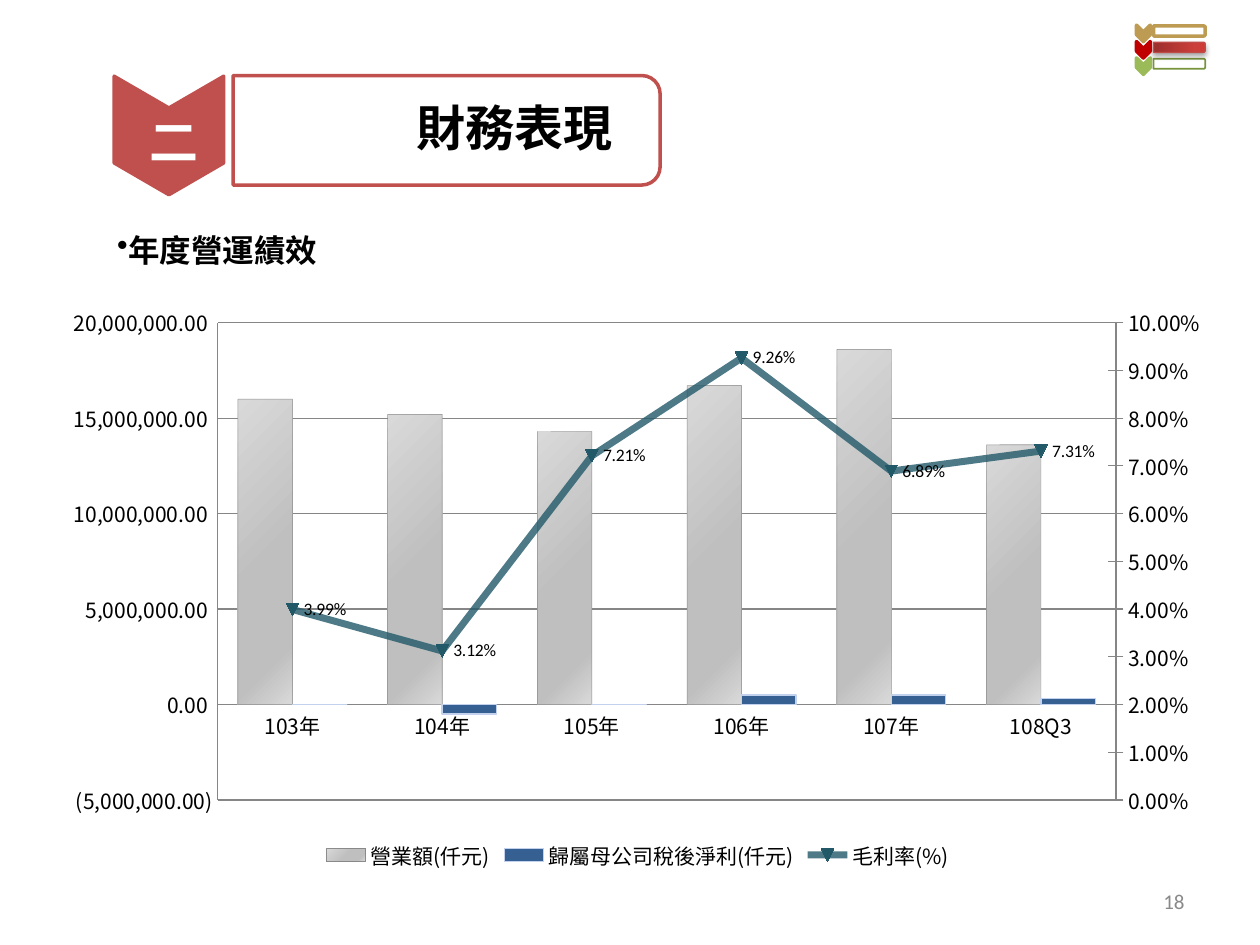
"""Build the yearly performance slide with a combined column and line chart."""
import copy

import pptx
import pptx.chart.axis
import pptx.chart.data
import pptx.dml.color
import pptx.enum.chart
import pptx.enum.shapes
import pptx.enum.text
import pptx.oxml
import pptx.oxml.ns
import pptx.util

Pt = pptx.util.Pt
qn = pptx.oxml.ns.qn
KIND = pptx.enum.shapes.MSO_SHAPE
ALIGN = pptx.enum.text.PP_ALIGN
TICK = pptx.enum.chart.XL_TICK_MARK
SPACE = pptx.oxml.ns.nsdecls("a", "c")
CJK = "Noto Sans CJK SC"
HUES = {
    "black": "000000", "white": "FFFFFF", "red": "C0504D", "gold": "BD9B53",
    "crimson": "C00000", "lime": "9BBB59", "olive": "77933C", "rim": "BF4C48",
    "page": "898989", "axis": "868686", "edge": "808080", "blue": "376092",
    "pale": "C2D1ED", "teal": "215968", "ruby": "9C2F2D", "rose": "CB3E3A",
    "coral": "CE3B37", "mist": "D9D9D9", "ash": "BFBFBF",
}


def hue(name):
    return pptx.dml.color.RGBColor.from_string(HUES[name])


def node(tag, body="", **attrs):
    text = "".join(f' {key}="{val}"' for key, val in attrs.items())
    return pptx.oxml.parse_xml(f"<{tag} {SPACE}{text}>{body}</{tag}>")


def prune(root, tag):
    for old in root.findall(qn(tag)):
        root.remove(old)


def paint(fill, name):
    fill.solid()
    fill.fore_color.rgb = hue(name)


def fade(item, route, share):
    tags = "/".join(qn(tag) for tag in route)
    item._element.find(".//" + qn("c:spPr" if route[0] == "a:ln" else "p:spPr")
                       + "/" + tags).append(node("a:alpha", val=share * 1000))


def blend(item, fill, stops, angle):
    fill.gradient()
    fill.gradient_angle = 360 - angle
    marks = item._element.find(".//" + qn("a:gsLst"))
    prune(marks, "a:gs")
    for place, name in stops:
        marks.append(node("a:gs", f'<a:srgbClr val="{HUES[name]}"/>',
                          pos=place * 1000))


def write(slide, box, text, size, name="black", font=CJK, bold=True,
          align=ALIGN.LEFT, insets=(7.2, 3.6, 7.2, 3.6), middle=True,
          bullet=None):
    frame = slide.shapes.add_textbox(*map(Pt, box)).text_frame
    frame.word_wrap = True
    (frame.margin_left, frame.margin_top,
     frame.margin_right, frame.margin_bottom) = map(Pt, insets)
    anchor = pptx.enum.text.MSO_ANCHOR
    frame.vertical_anchor = anchor.MIDDLE if middle else anchor.TOP
    para = frame.paragraphs[0]
    para.text = text
    para.alignment = align
    if bullet:
        para._p.get_or_add_pPr().append(node("a:buChar", char=bullet))
    face = para.font
    face.size, face.bold, face.name = Pt(size), bold, font
    face.color.rgb = hue(name)
    para._p.find(".//" + qn("a:defRPr")).append(node("a:ea", typeface=font))
    return para


def turned(slide, kind, box, line, width, fill=None):
    left, top, wide, high = box
    shape = slide.shapes.add_shape(
        kind, Pt(left + (wide - high) / 2), Pt(top + (high - wide) / 2),
        Pt(high), Pt(wide))
    shape.rotation = 90
    shape.shadow.inherit = False
    if fill:
        paint(shape.fill, fill)
    else:
        shape.fill.background()
    shape.line.color.rgb = hue(line)
    shape.line.width = Pt(width)
    return shape


def banner(slide):
    bar = turned(slide, KIND.ROUND_2_SAME_RECTANGLE, (133.2, 43.2, 244, 62.6),
                 "red", 2, "white")
    fade(bar, ("a:solidFill", "a:srgbClr"), 90)
    title = write(slide, (133.2, 43.2, 335.5, 62.6), "財務表現", 28,
                  insets=(105, 1.4, 1.4, 1.4))
    title.line_spacing = 0.9
    mark = turned(slide, KIND.CHEVRON, (65.2, 43.6, 62.6, 67.7), "red", 2, "red")
    mark.adjustments[0] = 0.29
    count = write(slide, (48.2, 66.2, 102.2, 32.4), "二", 28, "white",
                  align=ALIGN.CENTER, insets=(1.4,) * 4)
    count.line_spacing = 0.9


def badge(slide):
    rows = [("gold", "gold", 2, None), ("crimson", "rim", 0.75, "rose"),
            ("lime", "olive", 1, "white")]
    for step in (0, 2, 1):
        tip, line, width, fill = rows[step]
        down = step * 9.36
        bar = turned(slide, KIND.ROUND_2_SAME_RECTANGLE,
                     (659.2, 14.8 + down, 29.5, 5.8), line, width, fill)
        if fill == "white":
            fade(bar, ("a:solidFill", "a:srgbClr"), 90)
        elif fill:
            blend(bar, bar.fill, [(0, "ruby"), (80, "rose"), (100, "coral")], 270)
            glow = ('<a:outerShdw blurRad="39400" dist="22900" dir="5400000" '
                    'rotWithShape="0"><a:srgbClr val="000000">'
                    '<a:alpha val="35000"/></a:srgbClr></a:outerShdw>')
            old = bar._element.spPr.find(qn("a:effectLst"))
            old.getparent().replace(old, node("a:effectLst", glow))
        turned(slide, KIND.CHEVRON, (649.4, 14.4 + down, 7.9, 9.4), tip, 2, tip)


def scale(axis, low, high, unit, form):
    axis.minimum_scale, axis.maximum_scale = low, high
    axis.major_unit = unit
    axis.tick_labels.number_format = form
    axis.tick_labels.number_format_is_linked = False


def style(axis):
    axis.major_tick_mark = axis.minor_tick_mark = TICK.NONE
    axis.format.line.color.rgb = hue("axis")
    axis.tick_labels.font.size = Pt(12)
    axis.tick_labels.font.name = CJK


def split(chart):
    area = chart._chartSpace.find(".//" + qn("c:plotArea"))
    bars = area.find(qn("c:barChart"))
    rate = bars.findall(qn("c:ser"))[-1]
    prune(rate, "c:invertIfNegative")
    lines = node("c:lineChart", '<c:grouping val="standard"/><c:varyColors val="0"/>'
                 '<c:marker val="1"/><c:axId val="501"/><c:axId val="502"/>')
    lines.insert(2, rate)
    bars.addnext(lines)
    last = area.find(qn("c:valAx"))
    for tag, own, other in (("c:valAx", "502", "501"), ("c:catAx", "501", "502")):
        twin = copy.deepcopy(area.find(qn(tag)))
        twin.find(qn("c:axId")).set("val", own)
        twin.find(qn("c:crossAx")).set("val", other)
        last.addnext(twin)
        last = twin
    pptx.chart.axis.CategoryAxis(last).visible = False
    right = last.getprevious()
    right.find(qn("c:axPos")).set("val", "r")
    right.find(qn("c:crosses")).set("val", "max")
    axis = pptx.chart.axis.ValueAxis(right)
    axis.has_major_gridlines = False
    axis.major_tick_mark = TICK.CROSS
    scale(axis, 0, 0.1, 0.01, "0.00%")
    prune(area, "c:layout")
    spots = "".join(f'<c:{key} val="{val}"/>' for key, val in (
        ("layoutTarget", "inner"), ("xMode", "edge"), ("yMode", "edge"),
        ("x", 0.14), ("y", 0.05), ("w", 0.77), ("h", 0.82)))
    area.insert(0, node("c:layout", f"<c:manualLayout>{spots}</c:manualLayout>"))


def dress(chart):
    sales, gain = chart.plots[0].series
    blend(sales, sales.format.fill,
          [(0, "mist"), (53, "ash"), (83, "ash"), (100, "mist")], 45)
    paint(gain.format.fill, "blue")
    for bar, name, width in ((sales, "edge", 0.25), (gain, "pale", 0.75)):
        bar.format.line.color.rgb = hue(name)
        bar.format.line.width = Pt(width)
    fade(sales, ("a:ln", "a:solidFill", "a:srgbClr"), 85)
    rate = chart.plots[1].series[0]
    rate.smooth = False
    rate.format.line.color.rgb = hue("teal")
    rate.format.line.width = Pt(4)
    fade(rate, ("a:ln", "a:solidFill", "a:srgbClr"), 80)
    rate.marker.size = 7
    paint(rate.marker.format.fill, "teal")
    rate.marker.format.line.color.rgb = hue("teal")
    tags = rate.data_labels
    tags.show_value = True
    tags.number_format, tags.number_format_is_linked = "0.00%", False
    tags.position = pptx.enum.chart.XL_LABEL_POSITION.RIGHT
    tags.font.size = Pt(10)


def graph(slide):
    data = pptx.chart.data.CategoryChartData()
    data.categories = ["103年", "104年", "105年", "106年", "107年", "108Q3"]
    money = "#,##0.00_);\\(#,##0.00\\)"
    data.add_series("營業額(仟元)", [16000000, 15200000, 14300000, 16700000,
                                18600000, 13600000], money)
    data.add_series("歸屬母公司稅後淨利(仟元)",
                    [0, -500000, 0, 500000, 500000, 300000], money)
    data.add_series("毛利率(%)", [0.0399, 0.0312, 0.0721, 0.0926, 0.0689, 0.0731],
                    "0.00%")
    kind = pptx.enum.chart.XL_CHART_TYPE.COLUMN_CLUSTERED
    chart = slide.shapes.add_chart(kind, Pt(31), Pt(167.8), Pt(666.7), Pt(332.6),
                                   data).chart
    chart.has_title = False
    chart.font.size, chart.font.name = Pt(10), "Calibri"
    chart.font.color.rgb = hue("black")
    chart.has_legend = True
    chart.legend.position = pptx.enum.chart.XL_LEGEND_POSITION.BOTTOM
    chart.legend.include_in_layout = False
    chart.legend.font.size, chart.legend.font.name = Pt(12), CJK
    plot = chart.plots[0]
    plot.gap_width, plot.overlap, plot.vary_by_categories = 75, 0, False
    style(chart.category_axis)
    style(chart.value_axis)
    scale(chart.value_axis, -5000000, 20000000, 5000000, money)
    chart.value_axis.major_gridlines.format.line.color.rgb = hue("axis")
    split(chart)
    dress(chart)


def main():
    deck = pptx.Presentation()
    deck.slide_width, deck.slide_height = Pt(720), Pt(540)
    slide = deck.slides.add_slide(deck.slide_layouts[6])
    write(slide, (59.8, 128.2, 538.6, 33.8), "年度營運績效", 18, middle=False,
          bullet="•")
    banner(slide)
    badge(slide)
    write(slide, (516.2, 500.4, 167.8, 28.8), "18", 12, "page", "Calibri", False,
          ALIGN.RIGHT)
    graph(slide)
    deck.save("out.pptx")


if __name__ == "__main__":
    main()
